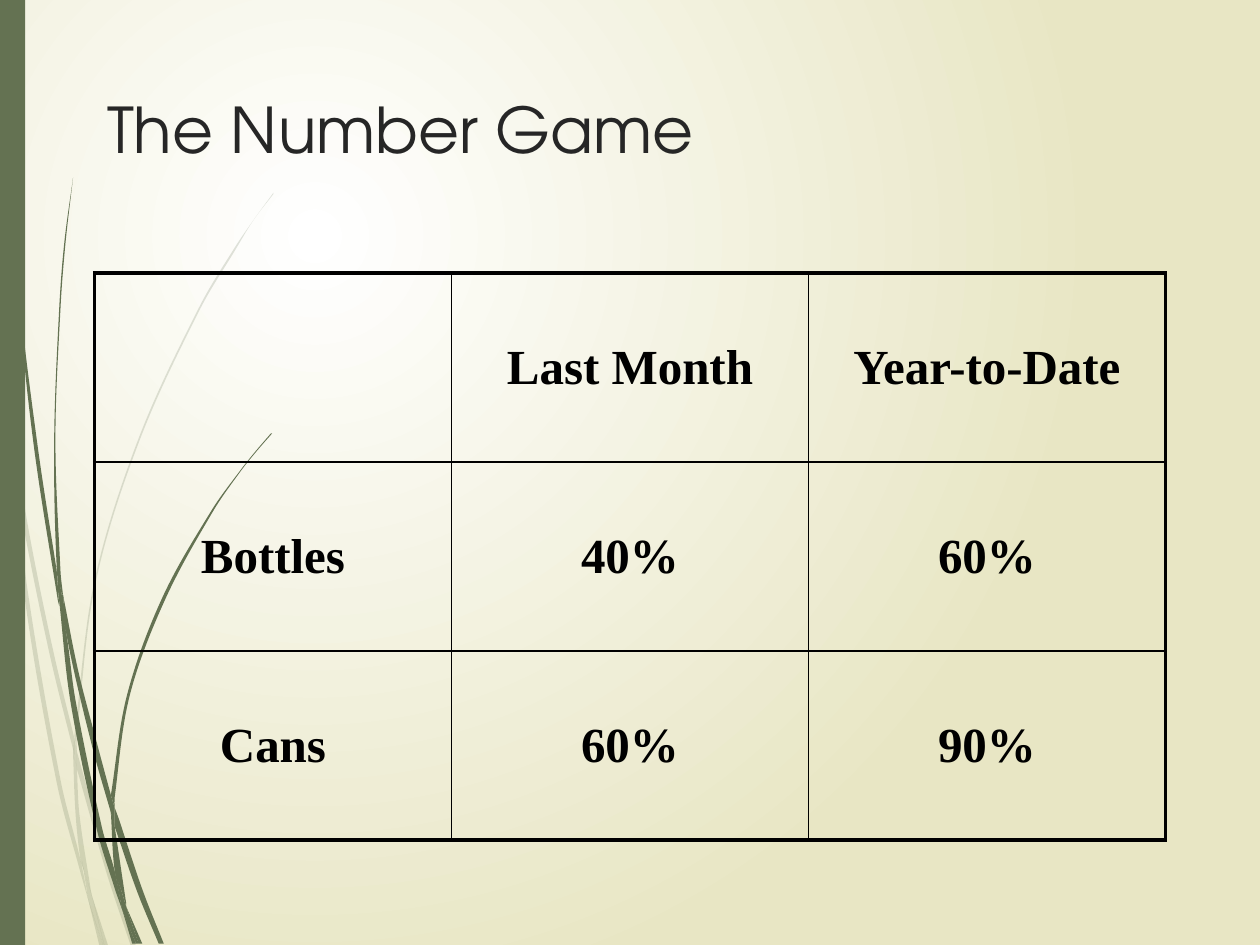
from math import dist

from lxml.etree import SubElement
from pptx import Presentation
from pptx.dml.color import RGBColor
from pptx.enum.shapes import MSO_SHAPE
from pptx.enum.text import MSO_ANCHOR, PP_ALIGN
from pptx.oxml import parse_xml
from pptx.oxml.ns import nsdecls, qn
from pptx.util import Pt

WHITE = RGBColor(0xFF, 0xFF, 0xFF)
CREAM = RGBColor(0xE8, 0xE6, 0xC4)
GREEN = RGBColor(0x64, 0x72, 0x52)
CHARCOAL = RGBColor(0x26, 0x26, 0x26)
BLACK = RGBColor(0, 0, 0)

TITLE_FONT = "TeX Gyre Adventor"
TABLE_FONT = "Times New Roman"
THICK, THIN = 2.25, 1
GRID = 0.72  # points per unit of the grass drawing

ROWS = [
    ["", "Last Month", "Year-to-Date"],
    ["Bottles", "40%", "60%"],
    ["Cans", "60%", "90%"],
]

# Each blade has two edges that together go round its outline.
PALE_BLADES = [
    ([(8, 350), (6, 322), (0, 282)], [(0, 299), (7, 344)]),
    ([(12, 376), (20, 425), (40, 522), (59, 599)],
     [(59, 586), (43, 520), (25, 433), (10, 345)]),
    ([(61, 596), (64, 607), (88, 692), (108, 751)],
     [(104, 751), (85, 694), (61, 610)]),
    ([(73, 711), (86, 751)], [(83, 751)]),
    ([(8, 350), (12, 376), (22, 469), (48, 619), (64, 683), (70, 714)],
     [(64, 693), (45, 621), (19, 470), (8, 350)]),
    ([(58, 599), (60, 646), (64, 683), (67, 692), (73, 711)],
     [(72, 706), (63, 646), (61, 608)]),
    ([(61, 596), (61, 584), (76, 462), (111, 349), (159, 245), (187, 198),
      (201, 175), (217, 154)],
     [(217, 153), (201, 175), (186, 197), (158, 244), (110, 348), (75, 461),
      (59, 584)]),
    ([(70, 714), (82, 751)], [(79, 751)]),
    ([(58, 599), (61, 608)], [(61, 596), (59, 586)]),
    ([(65, 683), (67, 692), (73, 711), (83, 751)],
     [(82, 751), (70, 714), (69, 707)]),
]
DARK_BLADES = [
    ([(2, 0), (3, 48), (5, 110), (14, 233), (27, 355), (46, 477), (47, 481)],
     [(45, 453), (30, 355), (15, 232), (6, 109), (4, 48), (3, 0)]),
    ([(50, 472), (53, 505), (73, 592), (88, 645)],
     [(88, 631), (77, 590), (62, 532), (50, 472)]),
    ([(91, 641), (94, 649), (113, 706), (130, 749)],
     [(126, 749), (109, 708), (91, 656)]),
    ([(47, 477), (53, 505), (60, 556), (81, 657), (91, 691), (97, 722)],
     [(92, 708), (77, 659), (56, 557), (47, 477)]),
    ([(50, 472), (48, 453), (44, 349), (48, 245), (52, 193), (58, 141)],
     [(58, 141), (51, 193), (47, 245), (43, 349), (45, 449), (49, 472)]),
    ([(100, 719), (113, 749)], [(110, 749)]),
    ([(45, 449), (47, 477), (53, 505)], [(50, 472), (49, 472)]),
    ([(91, 641), (91, 633), (103, 552), (131, 476), (169, 406), (191, 374),
      (203, 359), (216, 344)],
     [(215, 344), (203, 358), (191, 373), (168, 405), (129, 474), (101, 551),
      (88, 631)]),
    ([(97, 722), (108, 749)], [(105, 749)]),
    ([(88, 645), (91, 691), (96, 706), (100, 719)],
     [(100, 716), (91, 656), (90, 651)]),
    ([(88, 645), (91, 656)], [(91, 641), (88, 631)]),
    ([(91, 691), (96, 706), (100, 719), (110, 749)],
     [(108, 749), (97, 722), (96, 717)]),
]


def edge_handles(knots):
    """Return the two Bezier handles of each smooth segment between knots."""
    padded = [knots[0], *knots, knots[-1]]
    handles = []
    for before, start, end, after in zip(padded, padded[1:], padded[2:], padded[3:]):
        reach = dist(start, end) / 3
        leave, arrive = reach / dist(before, end), reach / dist(start, after)
        handles.append((
            tuple(s + (e - b) * leave for b, s, e in zip(before, start, end)),
            tuple(e - (a - s) * arrive for s, e, a in zip(start, end, after))))
    return handles


def paint(shape, opacity=100):
    shape.shadow.inherit = False
    shape.line.fill.background()
    shape.fill.solid()
    shape.fill.fore_color.rgb = GREEN
    if opacity < 100:
        color = shape.element.spPr.find(".//" + qn("a:srgbClr"))
        SubElement(color, qn("a:alpha"), val=str(opacity * 1000))


def add_blade(page, edges, opacity):
    first, second = edges
    outline = [(Pt(x * GRID), Pt(y * GRID)) for x, y in first + second]
    builder = page.shapes.build_freeform(*outline[0], scale=1.0)
    builder.add_line_segments(outline[1:], close=True)
    blade = builder.convert_to_shape()
    paint(blade, opacity)
    handles = edge_handles(first) + [None] + edge_handles(second)
    lines = blade.element.findall(".//" + qn("a:lnTo"))
    for line, pair in zip(lines, handles):
        if pair:
            line.tag = qn("a:cubicBezTo")
            for index, (x, y) in enumerate(pair):
                point = SubElement(line, qn("a:pt"), x=str(Pt(x * GRID) - blade.left),
                                   y=str(Pt(y * GRID) - blade.top))
                line.insert(index, point)


def set_background(page):
    """Fill the page with a round gradient centred in its upper left quarter."""
    fill = page.background.fill
    fill.gradient()
    for stop, color in zip(fill.gradient_stops, (WHITE, CREAM)):
        stop.color.rgb = color
    linear = page.element.find(".//" + qn("a:lin"))
    linear.getparent().replace(linear, parse_xml(
        f'<a:path {nsdecls("a")} path="circle"><a:fillToRect l="50000" '
        't="50000" r="100000" b="100000"/></a:path>'))


def format_run(paragraph, font_name, size, color, bold=False):
    for span in paragraph.runs:
        span.font.name = font_name
        span.font.size = Pt(size)
        span.font.color.rgb = color
        span.font.bold = bold


def set_title(page, text):
    title = page.shapes.title
    title.left, title.top, title.width, title.height = Pt(54), Pt(48), Pt(612), Pt(90)
    frame = title.text_frame
    frame.text = text
    frame.vertical_anchor = MSO_ANCHOR.TOP
    paragraph = frame.paragraphs[0]
    paragraph.alignment = PP_ALIGN.LEFT
    format_run(paragraph, TITLE_FONT, 36, CHARCOAL)
    page.shapes.element.append(title.element)  # in front of the grass


def set_borders(cell, widths):
    """Draw the left, right, top and bottom borders, in that order."""
    properties = cell._tc.get_or_add_tcPr()
    for index, (side, width) in enumerate(zip("LRTB", widths)):
        properties.insert(index, parse_xml(
            f'<a:ln{side} {nsdecls("a")} w="{Pt(width)}"><a:solidFill>'
            f'<a:srgbClr val="{BLACK}"/></a:solidFill></a:ln{side}>'))


def fill_cell(cell, text):
    cell.fill.background()
    if not text:
        return
    cell.vertical_anchor = MSO_ANCHOR.MIDDLE
    paragraph = cell.text_frame.paragraphs[0]
    paragraph.text = text
    paragraph.alignment = PP_ALIGN.CENTER
    spacing = SubElement(paragraph._p.get_or_add_pPr(), qn("a:spcBef"))
    SubElement(spacing, qn("a:spcPct"), val="20000")
    format_run(paragraph, TABLE_FONT, 28, BLACK, bold=True)


def add_number_table(page):
    last = len(ROWS) - 1
    table = page.shapes.add_table(
        len(ROWS), len(ROWS[0]), Pt(54), Pt(156), Pt(612), Pt(324)).table
    table.first_row = table.horz_banding = False
    for row, texts in enumerate(ROWS):
        for column, text in enumerate(texts):
            cell = table.cell(row, column)
            fill_cell(cell, text)
            outer = (column == 0, column == last, row == 0, row == last)
            set_borders(cell, [THICK if edge else THIN for edge in outer])


def main():
    deck = Presentation()
    deck.slide_width, deck.slide_height = Pt(720), Pt(540)
    page = deck.slides.add_slide(deck.slide_layouts[5])
    set_background(page)
    for blades, opacity in ((PALE_BLADES, 20), (DARK_BLADES, 100)):
        for edges in blades:
            add_blade(page, edges, opacity)
    paint(page.shapes.add_shape(MSO_SHAPE.RECTANGLE, 0, 0, Pt(14.4), Pt(540)))
    set_title(page, "The Number Game")
    add_number_table(page)
    deck.save("out.pptx")


if __name__ == "__main__":
    main()
